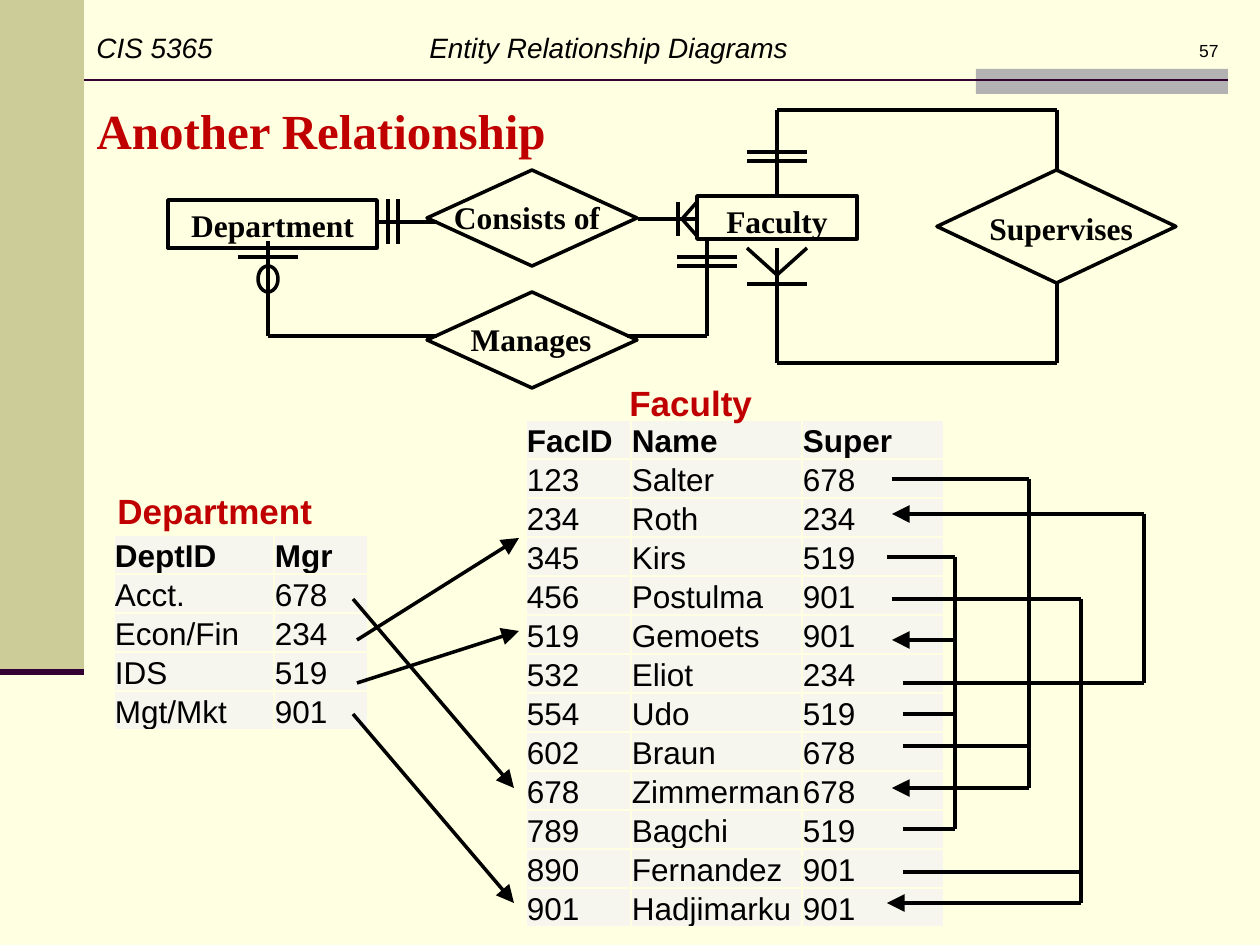
"""Builds the slide on the department and faculty relationships with its two tables."""
from dataclasses import dataclass
from itertools import pairwise

from lxml.etree import SubElement
from pptx import Presentation
from pptx.dml.color import RGBColor
from pptx.enum.shapes import MSO_CONNECTOR as Link, MSO_SHAPE as Form
from pptx.enum.text import MSO_ANCHOR as Anchor, PP_ALIGN as Align
from pptx.oxml.ns import qn
from pptx.util import Pt


@dataclass(frozen=True)
class Theme:
    page: str = "FFFFE1"
    sidebar: str = "CCCC99"
    tab: str = "B2B2B2"
    rule: str = "330033"
    ink: str = "000000"
    accent: str = "C00000"
    cell: str = "F6F6EF"
    sans: str = "Arial"
    serif: str = "Times New Roman"
    number_pt: int = 10
    header_pt: int = 16
    body_pt: int = 18
    caption_pt: int = 20
    title_pt: int = 28
    stroke_pt: int = 2


theme = Theme()
PX = 914400 / 126


def write(frame, text, color, align=Align.LEFT, line_spacing=None, lead=False, **font):
    paragraph = frame.paragraphs[0]
    paragraph.alignment = align
    paragraph.line_spacing = line_spacing
    if lead:
        before = SubElement(paragraph._p.get_or_add_pPr(), qn("a:spcBef"))
        SubElement(before, qn("a:spcPct"), val="50000")
    run = paragraph.add_run()
    run.text = text
    for key, value in font.items():
        setattr(run.font, key, value)
    run.font.color.rgb = RGBColor.from_string(color)
    return paragraph


def draw_route(points, arrow=False, color=theme.ink, width=theme.stroke_pt):
    for start, end in pairwise(points):
        ends = [round(value * PX) for value in (*start, *end)]
        segment = slide.shapes.add_connector(Link.STRAIGHT, *ends)
        segment.line.color.rgb = RGBColor.from_string(color)
        segment.line.width = Pt(width)
        SubElement(segment._element.spPr, qn("a:effectLst"))
    if arrow:
        head = dict(type="triangle", w="lg", len="lg")
        SubElement(segment.line._get_or_add_ln(), qn("a:tailEnd"), **head)


deck = Presentation()
deck.slide_width, deck.slide_height = round(1260 * PX), round(945 * PX)
slide = deck.slides.add_slide(deck.slide_layouts[5])
slide.background.fill.solid()
slide.background.fill.fore_color.rgb = RGBColor.from_string(theme.page)

rect, diamond = Form.RECTANGLE, Form.DIAMOND
entity_font = dict(name=theme.serif, size=Pt(theme.body_pt), bold=True)
caption_font = dict(name=theme.sans, size=Pt(theme.caption_pt), bold=True)

for box, fill in [((0, 0, 84, 672), theme.sidebar), ((976, 69, 252, 25), theme.tab)]:
    panel = slide.shapes.add_shape(rect, *[round(v * PX) for v in box])
    panel.shadow.inherit = False
    panel.fill.solid()
    panel.fill.fore_color.rgb = RGBColor.from_string(fill)
    panel.line.fill.background()
draw_route([(84, 80), (1228, 80)], color=theme.rule, width=1.5)
draw_route([(0, 672), (84, 672)], color=theme.rule, width=3.5)

title = slide.shapes.title
for key, value in dict(left=84, top=94, width=1176, height=72).items():
    setattr(title, key, round(value * PX))
title.text_frame.vertical_anchor = Anchor.TOP
write(title.text_frame, "Another Relationship", theme.accent, lead=True,
      name=theme.serif, size=Pt(theme.title_pt), bold=True)

outlines = [
    (rect, (168, 200, 209, 48), "Department"),
    (rect, (697, 196, 160, 43), "Faculty"),
    (diamond, (427, 170, 210, 96), ""),
    (diamond, (937, 170, 239, 113), ""),
    (diamond, (427, 292, 210, 96), ""),
    (Form.OVAL, (258, 266, 20, 26), ""),
]
for form, box, entity in outlines:
    outline = slide.shapes.add_shape(form, *[round(v * PX) for v in box])
    outline.shadow.inherit = False
    outline.fill.background()
    outline.line.color.rgb = RGBColor.from_string(theme.ink)
    outline.line.width = Pt(theme.stroke_pt)
    if entity:
        outline.text_frame.vertical_anchor = Anchor.TOP
        write(outline.text_frame, entity, theme.ink, Align.CENTER, lead=True, **entity_font)

relationship_routes = [
    [(638, 219), (697, 219)],
    [(697, 202), (682, 219), (697, 236)],
    [(378, 222), (437, 222)],
    [(777, 197), (777, 110), (1057, 110), (1057, 170)],
    [(1057, 284), (1057, 363), (777, 363), (777, 248)],
    [(807, 248), (777, 275), (747, 248)],
    [(707, 241), (707, 336), (627, 336)],
    [(437, 336), (268, 336), (268, 241)],
]
upright_bars = [(678, 202, 236), (388, 199, 244), (398, 199, 244)]
level_bars = [(747, 152), (747, 161), (747, 284), (677, 257), (677, 266), (238, 257)]
relationship_routes += [[(x, top), (x, bottom)] for x, top, bottom in upright_bars]
relationship_routes += [[(x, y), (x + 60, y)] for x, y in level_bars]
for route in relationship_routes:
    draw_route(route)

departments = [("DeptID", "Mgr"), ("Acct.", "678"), ("Econ/Fin", "234"),
               ("IDS", "519"), ("Mgt/Mkt", "901")]
faculty = [("FacID", "Name", "Super"), ("123", "Salter", "678"), ("234", "Roth", "234"),
           ("345", "Kirs", "519"), ("456", "Postulma", "901"), ("519", "Gemoets", "901"),
           ("532", "Eliot", "234"), ("554", "Udo", "519"), ("602", "Braun", "678"),
           ("678", "Zimmerman", "678"), ("789", "Bagchi", "519"),
           ("890", "Fernandez", "901"), ("901", "Hadjimarku", "901")]
cell_format = dict(margin_left=round(PX), margin_right=round(PX), margin_top=round(PX),
                   margin_bottom=0, vertical_anchor=Anchor.BOTTOM)
for records, left, top, widths in [(departments, 114, 535, (160, 94)),
                                   (faculty, 526, 420, (105, 171, 142))]:
    box = (left, top, sum(widths), 39 * len(records))
    grid = slide.shapes.add_table(len(records), len(widths), *[round(v * PX) for v in box]).table
    for column, width in zip(grid.columns, widths):
        column.width = round(width * PX)
    for row, record in enumerate(records):
        grid.rows[row].height = round(39 * PX)
        for col, value in enumerate(record):
            cell = grid.cell(row, col)
            for key, setting in cell_format.items():
                setattr(cell, key, setting)
            write(cell.text_frame, value, theme.ink, name=theme.sans,
                  size=Pt(theme.body_pt), bold=row == 0)
            properties = cell._tc.get_or_add_tcPr()
            for side in ("lnL", "lnR", "lnT", "lnB"):
                border = SubElement(properties, qn(f"a:{side}"), w=str(Pt(1)))
                paint = SubElement(border, qn("a:solidFill"))
                SubElement(paint, qn("a:srgbClr"), val=theme.page)
            cell.fill.solid()
            cell.fill.fore_color.rgb = RGBColor.from_string(theme.cell)

centred = dict(color=theme.ink, align=Align.CENTER, line_spacing=0.9, lead=True, **entity_font)
labels = [
    ((969, 34, 262, 63), "57", True, Anchor.TOP,
     dict(color=theme.ink, align=Align.RIGHT, name=theme.sans, size=Pt(theme.number_pt))),
    ((84, -32, 1155, 158), "CIS 5365\tEntity Relationship Diagrams", True, Anchor.MIDDLE,
     dict(color=theme.ink, name=theme.sans, size=Pt(theme.header_pt), italic=True)),
    ((437, 196, 180, 40), "Consists of", True, Anchor.TOP, centred),
    ((441, 318, 180, 40), "Manages", True, Anchor.TOP, centred),
    ((977, 203, 209, 43), "Supervises", True, Anchor.TOP,
     dict(color=theme.ink, lead=True, **entity_font)),
    ((105, 483, 222, 55), "Department", False, Anchor.TOP,
     dict(color=theme.accent, **caption_font)),
    ((617, 375, 149, 55), "Faculty", False, Anchor.TOP,
     dict(color=theme.accent, **caption_font)),
]
for box, text, wrap, anchor, style in labels:
    frame = slide.shapes.add_textbox(*[round(v * PX) for v in box]).text_frame
    frame.word_wrap = wrap
    frame.vertical_anchor = anchor
    paragraph = write(frame, text, **style)
    if "\t" in text:
        stops = SubElement(paragraph._p.get_or_add_pPr(), qn("a:tabLst"))
        SubElement(stops, qn("a:tab"), pos=str(round(333 * PX)), algn="l")

key_arrows = [
    [(353, 599), (514, 788)],
    [(357, 640), (519, 538)],
    [(357, 683), (519, 631)],
    [(353, 714), (514, 903)],
    [(892, 479), (1029, 479), (1029, 788), (892, 788)],
    [(887, 557), (955, 557), (955, 640), (892, 640)],
    [(892, 599), (1081, 599), (1081, 903), (887, 903)],
    [(903, 683), (1144, 683), (1144, 514), (892, 514)],
]
for route in key_arrows:
    draw_route(route, arrow=True)
for bus, y in [(955, 714), (1029, 746), (955, 829), (1081, 872)]:
    draw_route([(903, y), (bus, y)])
draw_route([(955, 829), (955, 714), (955, 640)])

deck.save("out.pptx")
